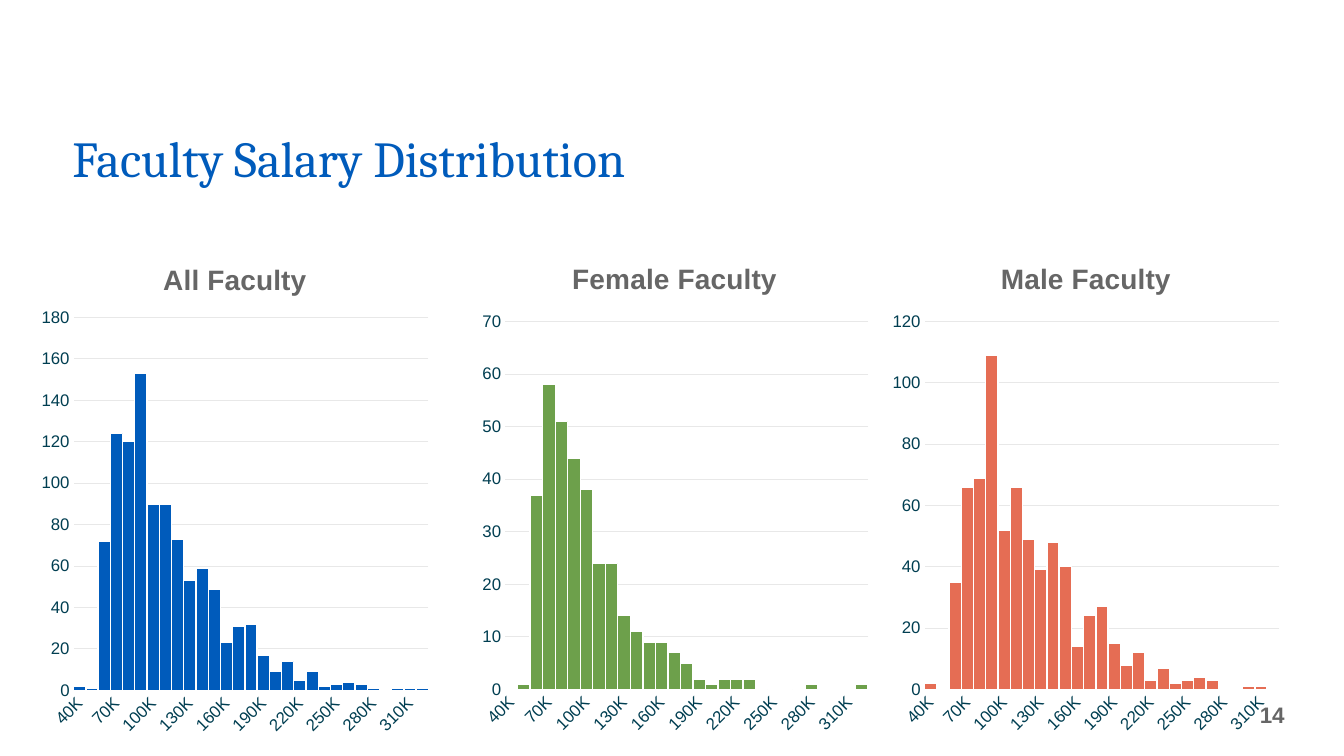
from pptx import Presentation
from pptx.chart.data import CategoryChartData
from pptx.dml.color import RGBColor
from pptx.enum.chart import XL_CHART_TYPE, XL_TICK_MARK
from pptx.enum.text import MSO_ANCHOR, PP_ALIGN
from pptx.oxml import parse_xml
from pptx.oxml.ns import nsdecls, qn
from pptx.util import Inches, Pt

BLUE = RGBColor(0x00, 0x5B, 0xBB)
GREEN = RGBColor(0x6D, 0xA0, 0x4B)
CORAL = RGBColor(0xE5, 0x6D, 0x54)
GRAY = RGBColor(0x66, 0x66, 0x66)
NAVY = RGBColor(0x00, 0x3E, 0x51)
PALE = RGBColor(0xE8, 0xE8, 0xE8)
WHITE = RGBColor(0xFF, 0xFF, 0xFF)

SALARY_BANDS = [f"{thousands}K" for thousands in range(40, 330, 10)]
ALL_COUNTS = [2, 1, 72, 124, 120, 153, 90, 90, 73, 53, 59, 49, 23, 31, 32,
              17, 9, 14, 5, 9, 2, 3, 4, 3, 1, 0, 1, 1, 1]
FEMALE_COUNTS = [0, 1, 37, 58, 51, 44, 38, 24, 24, 14, 11, 9, 9, 7, 5,
                 2, 1, 2, 2, 2, 0, 0, 0, 0, 1, 0, 0, 0, 1]
MALE_COUNTS = [2, 0, 35, 66, 69, 109, 52, 66, 49, 39, 48, 40, 14, 24, 27,
               15, 8, 12, 3, 7, 2, 3, 4, 3, 0, 0, 1, 1, 0]


class SlideBuilder:
    body_font = "Arial"
    title_font = "Cambria"

    def __init__(self, deck):
        self.slide = deck.slides.add_slide(deck.slide_layouts[6])

    def style(self, font, size, color, bold=False, name=body_font):
        font.name = name
        font.size = Pt(size)
        font.bold = bold
        font.color.rgb = color

    def text(self, wording, left, top, width, height, anchor, align, spacing, **look):
        box = self.slide.shapes.add_textbox(
            Inches(left), Inches(top), Inches(width), Inches(height))
        frame = box.text_frame
        frame.word_wrap = True
        frame.vertical_anchor = anchor
        frame.text = wording
        para = frame.paragraphs[0]
        para.alignment = align
        para.line_spacing = spacing
        self.style(para.runs[0].font, **look)

    def histogram(self, title, counts, color, left, top, peak, step, plot):
        data = CategoryChartData(number_format="#,##0")
        data.categories = SALARY_BANDS
        data.add_series("Series 1", counts)
        chart = self.slide.shapes.add_chart(
            XL_CHART_TYPE.COLUMN_CLUSTERED, Inches(left), Inches(top),
            Inches(4), Inches(5), data).chart
        self.style(chart.font, 10, GRAY)
        chart.has_legend = False
        chart.has_title = True
        heading = chart.chart_title.text_frame
        heading.text = title
        self.style(heading.paragraphs[0].runs[0].font, 20, GRAY, bold=True)

        columns = chart.plots[0]
        columns.vary_by_categories = False
        columns.gap_width = 0
        columns.overlap = -27
        bars = columns.series[0].format
        bars.fill.solid()
        bars.fill.fore_color.rgb = color
        bars.line.color.rgb = WHITE
        bars.line.width = Pt(1)

        for axis in (chart.category_axis, chart.value_axis):
            axis.major_tick_mark = XL_TICK_MARK.NONE
            axis.minor_tick_mark = XL_TICK_MARK.NONE
            self.style(axis.tick_labels.font, 12, NAVY)
        self.format_salary_axis(chart.category_axis)
        self.format_count_axis(chart.value_axis, peak, step)
        self.place_plot(chart, plot)

    def place_plot(self, chart, plot):
        plot_area = chart._chartSpace.chart.plotArea
        for automatic in plot_area.findall(qn("c:layout")):
            plot_area.remove(automatic)
        lengths = "".join(f'<c:{key} val="{value}"/>' for key, value in zip("xywh", plot))
        plot_area.insert(0, parse_xml(
            f'<c:layout {nsdecls("c")}><c:manualLayout><c:layoutTarget val="inner"/>'
            f'<c:xMode val="edge"/><c:yMode val="edge"/>{lengths}'
            '</c:manualLayout></c:layout>'))

    def format_salary_axis(self, axis):
        axis.format.line.color.rgb = PALE
        axis.format.line.width = Pt(0.75)
        axis_xml = axis._element
        body = axis_xml.find(qn("c:txPr")).find(qn("a:bodyPr"))
        body.set("rot", "-2700000")
        body.set("vert", "horz")
        skip = parse_xml(f'<c:tickLblSkip {nsdecls("c")} val="3"/>')
        axis_xml.find(qn("c:noMultiLvlLbl")).addprevious(skip)

    def format_count_axis(self, axis, peak, step):
        axis.minimum_scale = 0
        axis.maximum_scale = peak
        axis.major_unit = step
        axis.format.line.fill.background()
        axis.tick_labels.number_format = "#,##0"
        axis.tick_labels.number_format_is_linked = False
        axis.has_major_gridlines = True
        axis.major_gridlines.format.line.color.rgb = PALE
        axis.major_gridlines.format.line.width = Pt(0.75)


def main():
    deck = Presentation()
    deck.slide_width = Inches(13.33)
    deck.slide_height = Inches(7.5)
    page = SlideBuilder(deck)
    page.text("Faculty Salary Distribution", 0.62, 1.13, 11.5, 0.78,
              MSO_ANCHOR.BOTTOM, PP_ALIGN.LEFT, 0.8,
              size=36, color=BLUE, name=page.title_font)
    page.histogram("All Faculty", ALL_COUNTS, BLUE, 0.33, 2.4, 180, 20,
                   (0.1, 0.15, 0.88, 0.74))
    page.histogram("Female Faculty", FEMALE_COUNTS, GREEN, 4.69, 2.39, 70, 10,
                   (0.08, 0.16, 0.9, 0.73))
    page.histogram("Male Faculty", MALE_COUNTS, CORAL, 8.77, 2.39, 120, 20,
                   (0.1, 0.16, 0.88, 0.73))
    page.text("14", 12.08, 6.8, 0.76, 0.58, MSO_ANCHOR.MIDDLE, PP_ALIGN.RIGHT, 1,
              size=16, color=GRAY, bold=True)
    deck.save("out.pptx")


if __name__ == "__main__":
    main()
